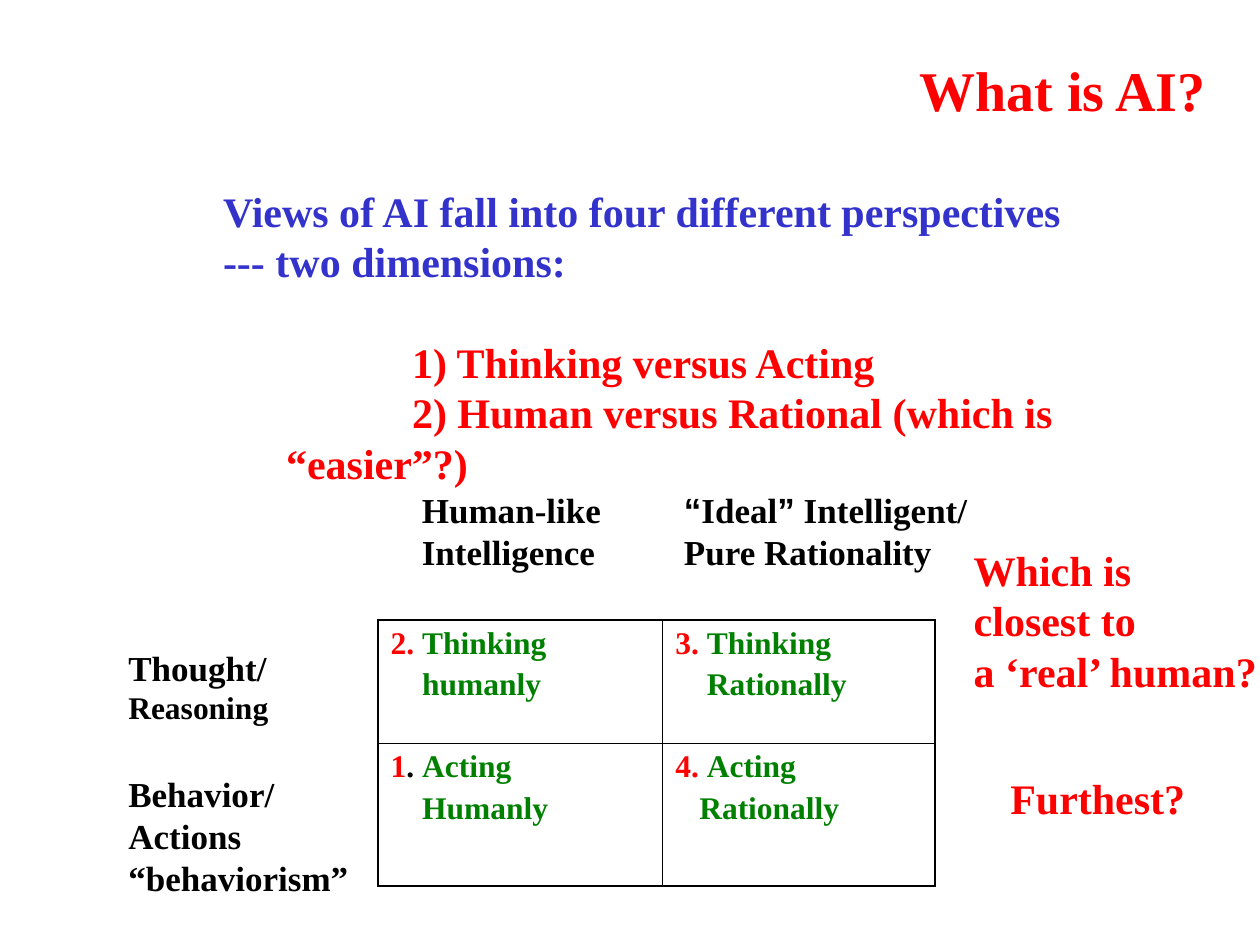
from pptx import Presentation
from pptx.dml.color import RGBColor
from pptx.enum.text import MSO_ANCHOR, PP_ALIGN
from pptx.oxml.ns import qn
from pptx.util import Inches, Pt
from lxml.etree import SubElement

SERIF, SANS = "Times New Roman", "Arial"
RED, BLUE, GREEN, BLACK = "FF0000", "3333CC", "008000", "000000"

TITLE = "What is AI?"
VIEWS = ["Views of AI fall into four different perspectives", "--- two dimensions:"]
AXES = ["1) Thinking versus Acting", "2) Human versus Rational (which is “easier”?)"]

# Each cell: number, colour of its dot, verb, manner, indent of the manner
CELLS = [
    [("2", RED, "Thinking", "humanly", 0.25), ("3", RED, "Thinking", "Rationally", 0.25)],
    [("1", BLACK, "Acting", "Humanly", 0.25), ("4", RED, "Acting", "Rationally", 0.19)],
]
COLS, ROWS = [2.26, 2.16], [0.98, 1.13]

# Each label: place, size, colour, lines; a line is a list of (text, changes)
LABELS = [
    ((0.92, 5.08, 1.32, 0.74), 20, BLACK, [[("Thought/", {})], [("Reasoning", {"size": 18})]]),
    ((0.92, 6.08, 1.99, 1.11), 20, BLACK,
     [[("Behavior/", {})], [("Actions", {})], [("“behaviorism”", {})]]),
    ((3.25, 3.83, 1.64, 0.77), 20, BLACK, [[("Human-like", {})], [("Intelligence", {})]]),
    ((5.33, 3.83, 2.49, 0.77), 20, BLACK,
     [[("“", {"name": SANS}), ("Ideal", {}), ("”", {"name": SANS}), (" Intelligent/", {})],
      [("Pure Rationality", {})]]),
    ((7.63, 4.27, 2.54, 1.31), 24, RED,
     [[("Which is", {})], [("closest to", {})], [("a ‘real’ human?", {})]]),
    ((7.92, 6.08, 1.6, 0.5), 24, RED, [[("Furthest?", {})]]),
]


def place(shape, box):
    shape.left, shape.top, shape.width, shape.height = map(Inches, box)


def add_run(para, text, size, color, name=SERIF):
    run = para.add_run()
    run.text = text
    for key, value in {"size": Pt(size), "name": name, "bold": True}.items():
        setattr(run.font, key, value)
    run.font.color.rgb = RGBColor.from_string(color)


def next_para(frame, first, left=0, indent=0, before=0):
    """Return the first or a new paragraph, unbulleted, with its indents in inches."""
    para = frame.paragraphs[0] if first else frame.add_paragraph()
    para.space_before = Pt(before)
    props = para._p.get_or_add_pPr()
    props.set("marL", str(Inches(left)))
    props.set("indent", str(Inches(indent)))
    SubElement(props, qn("a:buNone"))
    return para


def set_border(cell):
    props = cell._tc.get_or_add_tcPr()
    for side in ("lnL", "lnR", "lnT", "lnB"):
        line = SubElement(props, qn(f"a:{side}"), w=str(Pt(1)))
        fill = SubElement(line, qn("a:solidFill"))
        SubElement(fill, qn("a:srgbClr"), val=BLACK)


def add_title(slide):
    title = slide.shapes.title
    place(title, (1.17, 0.08, 8.5, 1.25))
    title.text_frame.vertical_anchor = MSO_ANCHOR.MIDDLE
    para = title.text_frame.paragraphs[0]
    para.alignment = PP_ALIGN.RIGHT
    add_run(para, TITLE, 32, RED)


def add_body(slide):
    body = slide.placeholders[1]
    place(body, (1.67, 1.42, 8.14, 2.52))
    frame = body.text_frame
    for i, text in enumerate(VIEWS):
        add_run(next_para(frame, i == 0), text, 24, BLUE)
    for i, text in enumerate(AXES):
        para = next_para(frame, False, 0.5, 1, 0 if i else 28.8)
        para.level = 1
        add_run(para, text, 24, RED)


def add_grid(slide):
    frame = slide.shapes.add_table(len(ROWS), len(COLS), Inches(3), Inches(4.92),
                                   Inches(sum(COLS)), Inches(sum(ROWS)))
    table = frame.table
    table.first_row = table.horz_banding = False
    for col, width in zip(table.columns, COLS):
        col.width = Inches(width)
    for row, height, items in zip(table.rows, ROWS, CELLS):
        row.height = Inches(height)
        for cell, (num, dot, verb, manner, left) in zip(row.cells, items):
            set_border(cell)
            cell.fill.background()
            para = next_para(cell.text_frame, True, before=3.6)
            for text, color in ((num, RED), (". ", dot), (verb, GREEN)):
                add_run(para, text, 18, color)
            para = next_para(cell.text_frame, False, left, before=3.6)
            add_run(para, manner, 18, GREEN)


def add_label(slide, box, size, color, lines):
    frame = slide.shapes.add_textbox(*map(Inches, box)).text_frame
    frame.word_wrap = False
    for i, line in enumerate(lines):
        para = next_para(frame, i == 0)
        for text, changes in line:
            add_run(para, text, **{"size": size, "color": color, **changes})


def main():
    deck = Presentation()
    deck.slide_width, deck.slide_height = Inches(10), Inches(7.5)
    slide = deck.slides.add_slide(deck.slide_layouts[1])
    add_title(slide)
    add_grid(slide)
    add_body(slide)
    for label in LABELS:
        add_label(slide, *label)
    deck.save("out.pptx")


if __name__ == "__main__":
    main()
